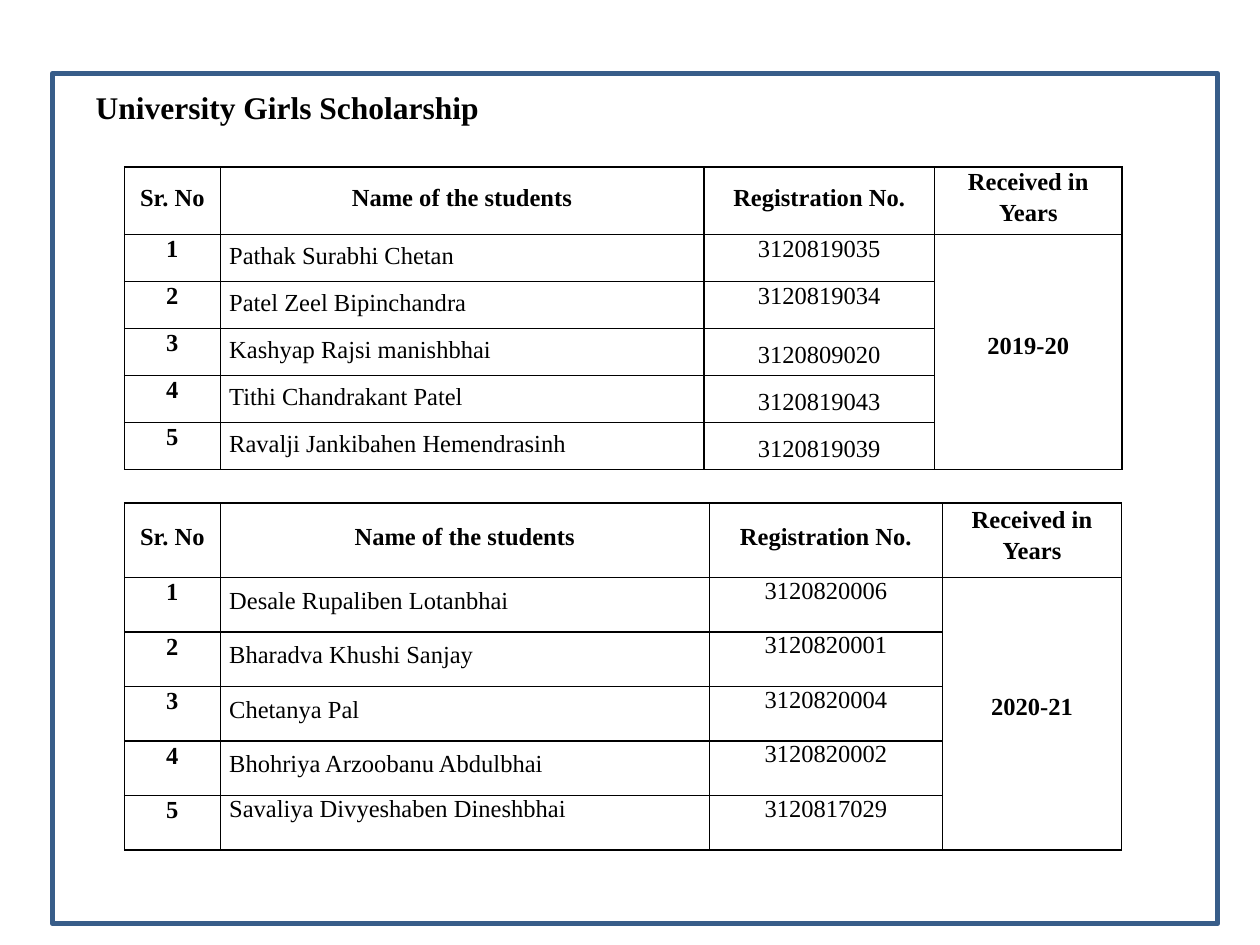
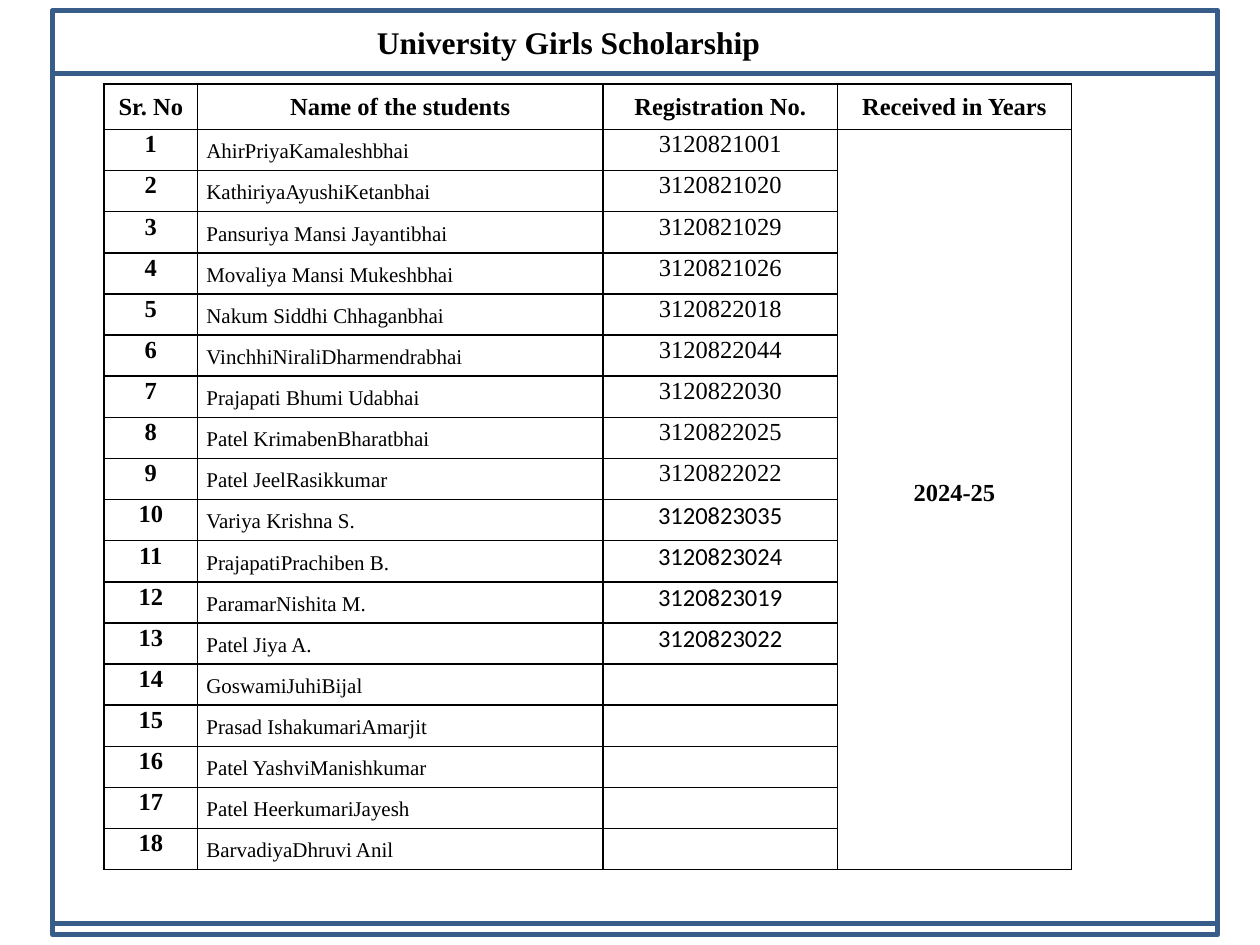
from dataclasses import dataclass

import lxml.etree
import pptx
import pptx.dml.color
import pptx.enum.shapes
import pptx.enum.text
import pptx.oxml.ns
import pptx.util

Cm, Pt = pptx.util.Cm, pptx.util.Pt
ALIGN = pptx.enum.text.PP_ALIGN
ANCHOR = pptx.enum.text.MSO_ANCHOR


@dataclass(frozen=True)
class Theme:
    ink: str = "000000"
    frame: str = "385D89"
    frame_width: float = 3
    border_width: float = 1
    font: str = "Times New Roman"
    alternate_font: str = "Calibri"
    title_size: int = 18
    body_size: int = 14
    small_size: int = 12


THEME = Theme()


@dataclass
class Award:
    """One year's scholarship table; box, columns and insets are in cm."""
    years: str
    students: list
    box: tuple
    columns: list
    header_height: float
    header_inset: float
    received: dict
    name_format: dict
    name_insets: list
    number_insets: list


AWARD_2019 = Award(
    years="2019-20",
    students=[
        ("Pathak Surabhi Chetan", "3120819035"),
        ("Patel Zeel Bipinchandra", "3120819034"),
        ("Kashyap Rajsi manishbhai", "3120809020"),
        ("Tithi Chandrakant Patel", "3120819043"),
        ("Ravalji Jankibahen Hemendrasinh", "3120819039"),
    ],
    box=(2.51, 3.37, 20.11, 6.1),
    columns=[1.93, 9.75, 4.65, 3.78],
    header_height=1.36,
    header_inset=0.35,
    received=dict(text="Received in\nYears", top=0.03, gap=2.5),
    name_format={},
    name_insets=[0.16] * 5,
    number_insets=[0.03] * 2 + [0.27] * 3,
)

AWARD_2020 = Award(
    years="2020-21",
    students=[
        ("Desale Rupaliben Lotanbhai", "3120820006"),
        ("Bharadva Khushi Sanjay", "3120820001"),
        ("Chetanya Pal", "3120820004"),
        ("Bhohriya Arzoobanu Abdulbhai", "3120820002"),
        ("Savaliya Divyeshaben Dineshbhai", "3120817029"),
    ],
    box=(2.51, 10.14, 20.1, 6.99),
    columns=[1.93, 9.86, 4.7, 3.61],
    header_height=1.5,
    header_inset=0.42,
    received=dict(text="Received in Years", side=0.4, line_spacing=1.15),
    name_format={},
    name_insets=[0.2] * 4 + [0],
    number_insets=[0] * 5,
)

AWARD_2024 = Award(
    years="2024-25",
    students=[
        ("AhirPriyaKamaleshbhai", "3120821001"),
        ("KathiriyaAyushiKetanbhai", "3120821020"),
        ("Pansuriya Mansi Jayantibhai", "3120821029"),
        ("Movaliya Mansi Mukeshbhai", "3120821026"),
        ("Nakum Siddhi Chhaganbhai", "3120822018"),
        ("VinchhiNiraliDharmendrabhai", "3120822044"),
        ("Prajapati Bhumi Udabhai", "3120822030"),
        ("Patel KrimabenBharatbhai", "3120822025"),
        ("Patel JeelRasikkumar", "3120822022"),
        ("Variya Krishna S.", "3120823035"),
        ("PrajapatiPrachiben B.", "3120823024"),
        ("ParamarNishita M.", "3120823019"),
        ("Patel Jiya A.", "3120823022"),
        ("GoswamiJuhiBijal", ""),
        ("Prasad IshakumariAmarjit", ""),
        ("Patel YashviManishkumar", ""),
        ("Patel HeerkumariJayesh", ""),
        ("BarvadiyaDhruvi Anil", ""),
    ],
    box=(2.1, 1.69, 19.5, 15.85),
    columns=[1.88, 8.18, 4.72, 4.72],
    header_height=0.92,
    header_inset=0.2,
    received=dict(text="Received in Years", top=0.2),
    name_format=dict(size=THEME.small_size, anchor=ANCHOR.MIDDLE, line_spacing=1.15),
    name_insets=[0] * 18,
    number_insets=[0.03] * 18,
)


def write_text(frame, text, size=THEME.body_size, bold=False, font=THEME.font,
               align=ALIGN.LEFT, line_spacing=None, gap=0):
    """Write one paragraph per line of text; gap is the points between them."""
    frame.word_wrap = True
    for index, line in enumerate(text.split("\n")):
        paragraph = frame.add_paragraph() if index else frame.paragraphs[0]
        paragraph.alignment = align
        if line_spacing:
            paragraph.line_spacing = line_spacing
        if index:
            paragraph.space_before = Pt(gap)
        run = paragraph.add_run()
        run.text = line
        run.font.size = Pt(size)
        run.font.bold = bold
        run.font.name = font
        run.font.color.rgb = pptx.dml.color.RGBColor.from_string(THEME.ink)


def write_cell(cell, text, top=0, side=0, bottom=0, anchor=ANCHOR.TOP, **text_format):
    cell.margin_top, cell.margin_bottom = Cm(top), Cm(bottom)
    cell.margin_left = cell.margin_right = Cm(side)
    cell.vertical_anchor = anchor
    if text:
        write_text(cell.text_frame, text, **text_format)


def outline_cell(cell):
    properties = cell._tc.get_or_add_tcPr()
    qn = pptx.oxml.ns.qn
    for edge in ("a:lnL", "a:lnR", "a:lnT", "a:lnB"):
        line = lxml.etree.SubElement(properties, qn(edge), w=str(Pt(THEME.border_width)))
        fill = lxml.etree.SubElement(line, qn("a:solidFill"))
        lxml.etree.SubElement(fill, qn("a:srgbClr"), val=THEME.ink)
    cell.fill.background()


def add_frame(slide, left, top, width, height):
    frame = slide.shapes.add_shape(pptx.enum.shapes.MSO_SHAPE.RECTANGLE,
                                   Cm(left), Cm(top), Cm(width), Cm(height))
    frame.shadow.inherit = False
    frame.fill.background()
    frame.line.color.rgb = pptx.dml.color.RGBColor.from_string(THEME.frame)
    frame.line.width = Pt(THEME.frame_width)


def add_title(slide, left, top):
    title = slide.shapes.add_textbox(Cm(left), Cm(top), Cm(8.2), Cm(0.84)).text_frame
    title.margin_left = title.margin_right = title.margin_bottom = 0
    title.margin_top = Cm(0.03)
    write_text(title, "University Girls Scholarship", size=THEME.title_size, bold=True)


def add_award_table(slide, award):
    row_count = len(award.students) + 1
    height = award.box[3]
    table = slide.shapes.add_table(row_count, len(award.columns),
                                   *(Cm(length) for length in award.box)).table
    table.first_row = table.horz_banding = False
    for column, width in zip(table.columns, award.columns):
        column.width = Cm(width)
    for row in table.rows:
        row.height = Cm((height - award.header_height) / (row_count - 1))
    table.rows[0].height = Cm(award.header_height)
    for cell in table.iter_cells():
        outline_cell(cell)
        write_cell(cell, "")

    centred = dict(align=ALIGN.CENTER)
    heading = dict(bold=True, **centred)
    for column, label in enumerate(("Sr. No", "Name of the students", "Registration No.")):
        write_cell(table.cell(0, column), label, top=award.header_inset, **heading)
    write_cell(table.cell(0, 3), **award.received, **heading)

    rows = zip(award.students, award.name_insets, award.number_insets)
    for serial, ((name, number), name_inset, number_inset) in enumerate(rows, start=1):
        font = THEME.alternate_font if number.startswith("3120823") else THEME.font
        write_cell(table.cell(serial, 0), str(serial), top=0.03, **heading)
        write_cell(table.cell(serial, 1), name, top=name_inset, side=0.18,
                   **award.name_format)
        write_cell(table.cell(serial, 2), number, top=number_inset, font=font, **centred)

    years = table.cell(1, 3)
    years.merge(table.cell(row_count - 1, 3))
    write_cell(years, award.years, bottom=0.25, anchor=ANCHOR.MIDDLE, **heading)


def add_scholarship_slide(deck, title_at, awards, outer_frame=False):
    slide = deck.slides.add_slide(deck.slide_layouts[6])
    add_frame(slide, 1.06, 1.48, 23.49, 17.14)
    if outer_frame:
        add_frame(slide, 1.06, 0.21, 23.49, 18.63)
    add_title(slide, *title_at)
    for award in awards:
        add_award_table(slide, award)


def main():
    deck = pptx.Presentation()
    deck.slide_width, deck.slide_height = Cm(25.4), Cm(19.05)
    add_scholarship_slide(deck, (1.93, 1.75), [AWARD_2019, AWARD_2020])
    add_scholarship_slide(deck, (7.6, 0.43), [AWARD_2024], outer_frame=True)
    deck.save("out.pptx")


if __name__ == "__main__":
    main()
